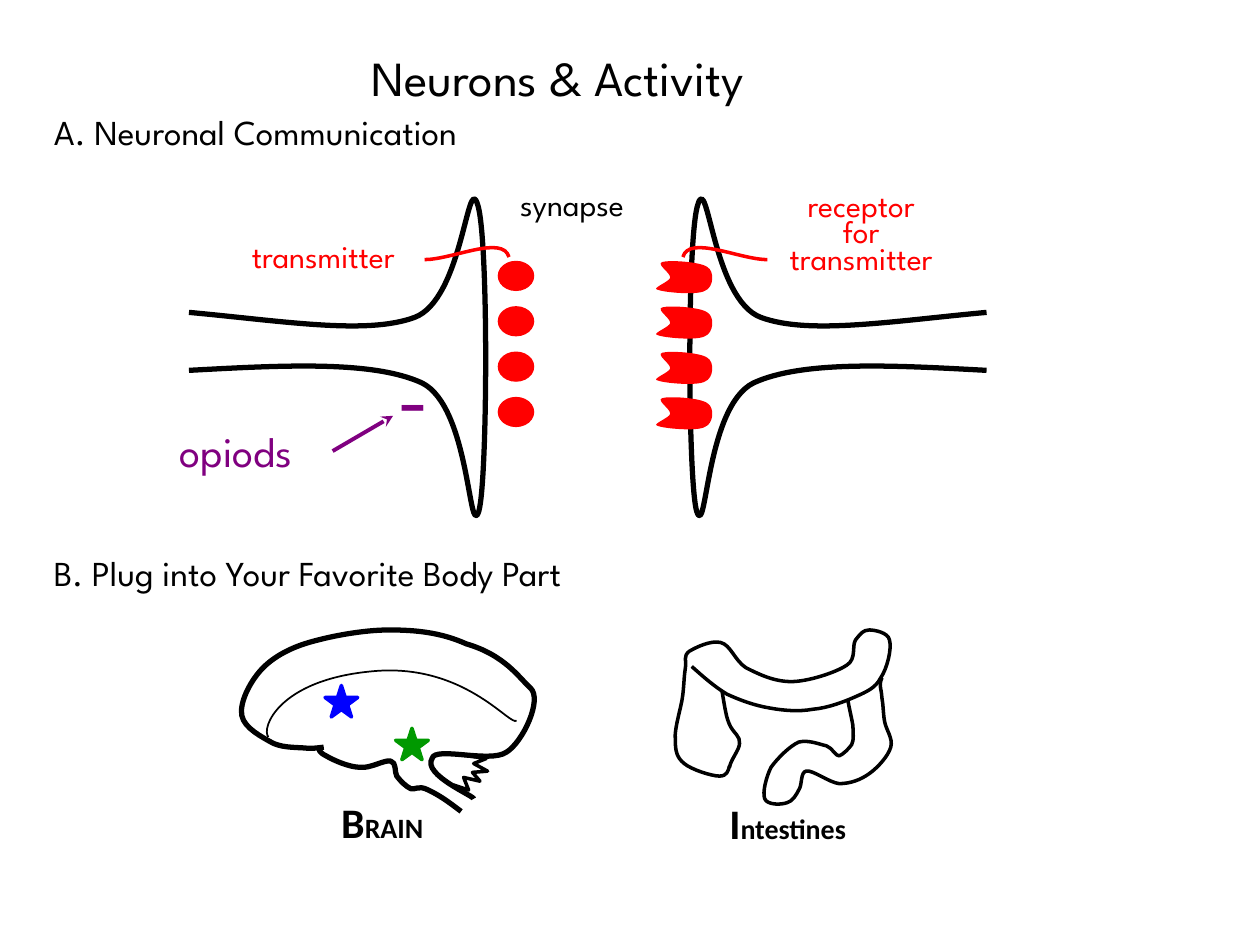
from pptx import Presentation
from pptx.dml.color import RGBColor
from pptx.enum.shapes import MSO_CONNECTOR, MSO_SHAPE
from pptx.enum.text import MSO_ANCHOR, MSO_AUTO_SIZE, PP_ALIGN
from pptx.oxml.ns import qn
from pptx.util import Inches, Pt
from lxml import etree

STAR, OVAL = MSO_SHAPE.STAR_5_POINT, MSO_SHAPE.OVAL
LEFT, CENTER = PP_ALIGN.LEFT, PP_ALIGN.CENTER

COLORS = {"black": "000000", "red": "FF0000", "purple": "800080",
          "blue": "0000FF", "green": "009900"}
SPARTAN, CALIBRI = "League Spartan", "Calibri"

# Content: left, top, width, height, lines, format
LABELS = [
    (2.85, 0.33, 3.74, 0.57, ["Neurons & Activity"], {"size": 28}),
    (0.33, 0.83, 4.00, 0.44, ["A. Neuronal Communication"], {"size": 20}),
    (0.33, 4.33, 5.17, 0.44, ["B. Plug into Your Favorite Body Part"], {"size": 20}),
    (4.03, 1.42, 1.22, 0.40, ["synapse"], {}),
    (1.90, 1.83, 1.57, 0.40, ["transmitter"], {"color": "red"}),
    (6.05, 1.52, 1.57, 0.73, ["receptor", "for", "transmitter"],
     {"color": "red", "align": CENTER, "spacing": 15}),
    (1.33, 3.33, 1.30, 0.50, ["opiods"], {"size": 24, "color": "purple"}),
    (3.06, 2.68, 0.43, 0.91, ["-"], {"size": 48, "color": "purple"}),
]
# Captions: a large initial, then the rest of the word
CAPTIONS = [(2.61, 6.27, 0.92, 0.52, ("B", "RAIN")),
            (5.69, 6.28, 1.40, 0.50, ("I", "ntestines"))]
STARS = [(2.58, 5.44, "blue"), (3.14, 5.78, "green")]

# Curves: a start point, then two control points and an end point per segment
NEURON = [(1.5, 2.48), (2.26, 2.55), (2.91, 2.66), (3.29, 2.52),
          (3.67, 2.38), (3.71, 1.36), (3.79, 1.62), (3.88, 1.87), (3.87, 3.83), (3.8, 4.06),
          (3.72, 4.3), (3.73, 3.23), (3.35, 3.04), (2.96, 2.86), (2.24, 2.9), (1.5, 2.94)]
POINTER = [(3.37, 2.06), (3.59, 2.06), (3.99, 1.86), (4.04, 2.04)]
RECEPTOR = [(5.25, 2.09), (5.2, 2.11), (5.32, 2.17), (5.32, 2.21),
            (5.32, 2.24), (5.18, 2.3), (5.22, 2.31), (5.27, 2.33), (5.54, 2.34), (5.6, 2.3),
            (5.67, 2.27), (5.67, 2.14), (5.61, 2.11), (5.55, 2.07), (5.3, 2.07), (5.25, 2.09)]
BRAIN = [
    ([(3.76, 6.34), (3.77, 6.32), (3.35, 6.15), (3.43, 6.02),
      (3.45, 5.92), (3.89, 6.06), (4.02, 5.97), (4.15, 5.89), (4.31, 5.55), (4.21, 5.46),
      (4.12, 5.38), (4.01, 5.2), (3.7, 5.11), (3.5, 5.02), (3.3, 5), (3.09, 5),
      (2.88, 5), (2.62, 5.05), (2.45, 5.1), (2.28, 5.15), (2.15, 5.23), (2.07, 5.32),
      (1.98, 5.42), (1.9, 5.58), (1.92, 5.68), (1.94, 5.78), (2.08, 5.85), (2.17, 5.9),
      (2.26, 5.94), (2.38, 5.93), (2.45, 5.94), (2.51, 5.94), (2.57, 5.93), (2.57, 5.93)], 3),
    ([(2.53, 5.93), (2.53, 5.95), (2.53, 5.97), (2.59, 6),
      (2.64, 6.03), (2.77, 6.09), (2.86, 6.09), (2.94, 6.1), (3.05, 6.03), (3.1, 6.04),
      (3.15, 6.05), (3.13, 6.13), (3.15, 6.16), (3.18, 6.2), (3.22, 6.24), (3.26, 6.26),
      (3.3, 6.27), (3.32, 6.23), (3.4, 6.27), (3.48, 6.31), (3.53, 6.34), (3.66, 6.44)], 3),
    ([(2.13, 5.85), (2.07, 5.78), (2.21, 5.4), (2.94, 5.33),
      (3.68, 5.25), (4.05, 5.77), (4.1, 5.72)], 1),
]
CEREBELLUM = [(3.66, 5.99), (3.86, 6.02), (3.76, 6.06), (3.87, 6.12), (3.75, 6.13),
              (3.81, 6.2), (3.68, 6.17), (3.72, 6.27), (3.6, 6.23)]
INTESTINES = [
    [(5.79, 6.08), (5.78, 6.12), (5.77, 6.16), (5.71, 6.16),
     (5.65, 6.16), (5.49, 6.11), (5.43, 6.06), (5.37, 6.01), (5.36, 5.96), (5.36, 5.87),
     (5.35, 5.78), (5.41, 5.61), (5.42, 5.51), (5.43, 5.42), (5.43, 5.36), (5.44, 5.3),
     (5.45, 5.24), (5.42, 5.21), (5.47, 5.17), (5.52, 5.14), (5.64, 5.08), (5.72, 5.1),
     (5.8, 5.12), (5.83, 5.24), (5.92, 5.3), (6.02, 5.35), (6.14, 5.41), (6.28, 5.41),
     (6.41, 5.41), (6.63, 5.34), (6.72, 5.28), (6.8, 5.23), (6.76, 5.13), (6.79, 5.08),
     (6.83, 5.03), (6.85, 5), (6.9, 5), (6.94, 5), (7.05, 5.02), (7.06, 5.08),
     (7.08, 5.15), (7.04, 5.31), (6.99, 5.38), (6.95, 5.46), (6.88, 5.49), (6.79, 5.53),
     (6.7, 5.57), (6.57, 5.62), (6.45, 5.63), (6.34, 5.65), (6.22, 5.64), (6.11, 5.62),
     (5.99, 5.6), (5.88, 5.56), (5.77, 5.51), (5.67, 5.45), (5.58, 5.37), (5.49, 5.29)],
    [(5.73, 5.48), (5.74, 5.54), (5.75, 5.6), (5.76, 5.65),
     (5.77, 5.7), (5.78, 5.73), (5.8, 5.77), (5.82, 5.81), (5.88, 5.85), (5.87, 5.9),
     (5.87, 5.95), (5.8, 6.03), (5.79, 6.09)],
    [(7, 5.38), (6.97, 5.44), (7, 5.48), (7, 5.54),
     (7.01, 5.59), (7.01, 5.66), (7.02, 5.72), (7.03, 5.79), (7.09, 5.86), (7.07, 5.93),
     (7.05, 6), (6.97, 6.09), (6.9, 6.14), (6.83, 6.19), (6.75, 6.22), (6.66, 6.22),
     (6.58, 6.21), (6.45, 6.11), (6.4, 6.12), (6.35, 6.13), (6.37, 6.23), (6.34, 6.27),
     (6.32, 6.31), (6.29, 6.36), (6.25, 6.37), (6.2, 6.39), (6.09, 6.39), (6.07, 6.34),
     (6.05, 6.29), (6.08, 6.17), (6.12, 6.09), (6.17, 6.02), (6.27, 5.92), (6.34, 5.89),
     (6.42, 5.87), (6.51, 5.91), (6.56, 5.92), (6.61, 5.94), (6.63, 6), (6.66, 6),
     (6.69, 5.99), (6.74, 5.94), (6.76, 5.91), (6.78, 5.87), (6.77, 5.82), (6.77, 5.76),
     (6.76, 5.7), (6.74, 5.62), (6.73, 5.56)],
]
ROWS, PITCH, STEPS = 4, 0.36, 12

prs = Presentation()
prs.slide_width, prs.slide_height = Inches(10), Inches(7.5)
s = prs.slides.add_slide(prs.slide_layouts[6])


def rgb(name):
    return RGBColor.from_string(COLORS[name])


def text(x, y, w, h, lines, size=18, color="black", font=SPARTAN, align=LEFT,
         spacing=None, bold=False, wrap=False):
    """Each line is a string, or a list of (string, size) runs."""
    tf = s.shapes.add_textbox(*map(Inches, (x, y, w, h))).text_frame
    tf.word_wrap, tf.vertical_anchor = wrap, MSO_ANCHOR.TOP
    tf.auto_size = MSO_AUTO_SIZE.SHAPE_TO_FIT_TEXT
    for i, line in enumerate(lines):
        p = tf.add_paragraph() if i else tf.paragraphs[0]
        p.alignment = align
        if spacing:
            p.line_spacing = Pt(spacing)
        for part, pts in [(line, size)] if isinstance(line, str) else line:
            r = p.add_run()
            r.text = part
            r.font.name, r.font.size, r.font.bold = font, Pt(pts), bold
            r.font.color.rgb = rgb(color)


def paint(sp, fill=None, line=None, width=1):
    sp.shadow.inherit = False
    for part, color in ((sp.fill, fill), (sp.line.fill, line)):
        if color:
            part.solid()
            part.fore_color.rgb = rgb(color)
        else:
            part.background()
    if line:
        sp.line.width = Pt(width)
    return sp


def outline(pts, close=False, **style):
    emu = [(Inches(x), Inches(y)) for x, y in pts]
    fb = s.shapes.build_freeform(*emu[0], scale=1.0)
    fb.add_line_segments(emu[1:], close=close)
    return paint(fb.convert_to_shape(), **style)


def extent(pts, axis):
    """Lowest and highest value that the curve reaches on one axis."""
    vals = []
    for i in range(0, len(pts) - 1, 3):
        a, b, c, d = (q[axis] for q in pts[i:i + 4])
        for t in (k / STEPS for k in range(STEPS + 1)):
            u = 1 - t
            vals.append(a * u ** 3 + 3 * b * t * u * u + 3 * c * t * t * u + d * t ** 3)
    return Inches(min(vals)), Inches(max(vals))


def curve(pts, close=False, **style):
    sp = outline(pts[::3], close, **style)
    (x0, x1), (y0, y1) = extent(pts, 0), extent(pts, 1)
    sp.left, sp.top, sp.width, sp.height = x0, y0, x1 - x0, y1 - y0
    trace = sp._element.find(".//" + qn("a:path"))
    trace.set("w", str(x1 - x0))
    trace.set("h", str(y1 - y0))
    for node in list(trace):
        trace.remove(node)
    segments = [("a:moveTo", pts[:1])]
    segments += [("a:cubicBezTo", pts[i:i + 3]) for i in range(1, len(pts), 3)]
    for tag, group in segments + [("a:close", [])] * close:
        node = etree.SubElement(trace, qn(tag))
        for x, y in group:
            etree.SubElement(node, qn("a:pt"), x=str(Inches(x) - x0), y=str(Inches(y) - y0))
    return sp


def preset(kind, x, y, w, h, **style):
    return paint(s.shapes.add_shape(kind, *map(Inches, (x, y, w, h))), **style)


def mirror(pts, total):
    return [(total - x, y) for x, y in pts]


# Two facing neurons
for pts in (NEURON, mirror(NEURON, 9.33)):
    curve(pts, line="black", width=3)

# Transmitters and receptors, with their pointers
for row in range(ROWS):
    dy = row * PITCH
    sp = curve([(x, y + dy) for x, y in RECEPTOR], close=True, fill="red")
    sp.rotation = 3.1
    preset(OVAL, 3.95, 2.07 + dy, 0.29, 0.24, fill="red")
for pts in (POINTER, mirror(POINTER, 9.46)):
    curve(pts, line="red", width=2)

# Brain and intestines
for pts, width in BRAIN:
    curve(pts, line="black", width=width)
outline(CEREBELLUM, line="black", width=2)
for x, y, color in STARS:
    preset(STAR, x, y, 0.26, 0.25, fill=color, line=color, width=2)
for pts in INTESTINES:
    curve(pts, line="black", width=2)

# Opioid arrow
arrow = s.shapes.add_connector(MSO_CONNECTOR.STRAIGHT,
                               *map(Inches, (2.64, 3.58, 3.12, 3.3)))
arrow.line.color.rgb, arrow.line.width = rgb("purple"), Pt(2.25)
etree.SubElement(arrow.line._get_or_add_ln(), qn("a:tailEnd"), type="stealth")
etree.SubElement(arrow._element.spPr, qn("a:effectLst"))

# Labels and captions
for x, y, w, h, lines, style in LABELS:
    text(x, y, w, h, lines, **style)
for x, y, w, h, (initial, rest) in CAPTIONS:
    text(x, y, w, h, [[(initial, 24), (rest, 16)]], font=CALIBRI, bold=True, wrap=True)

prs.save("out.pptx")
